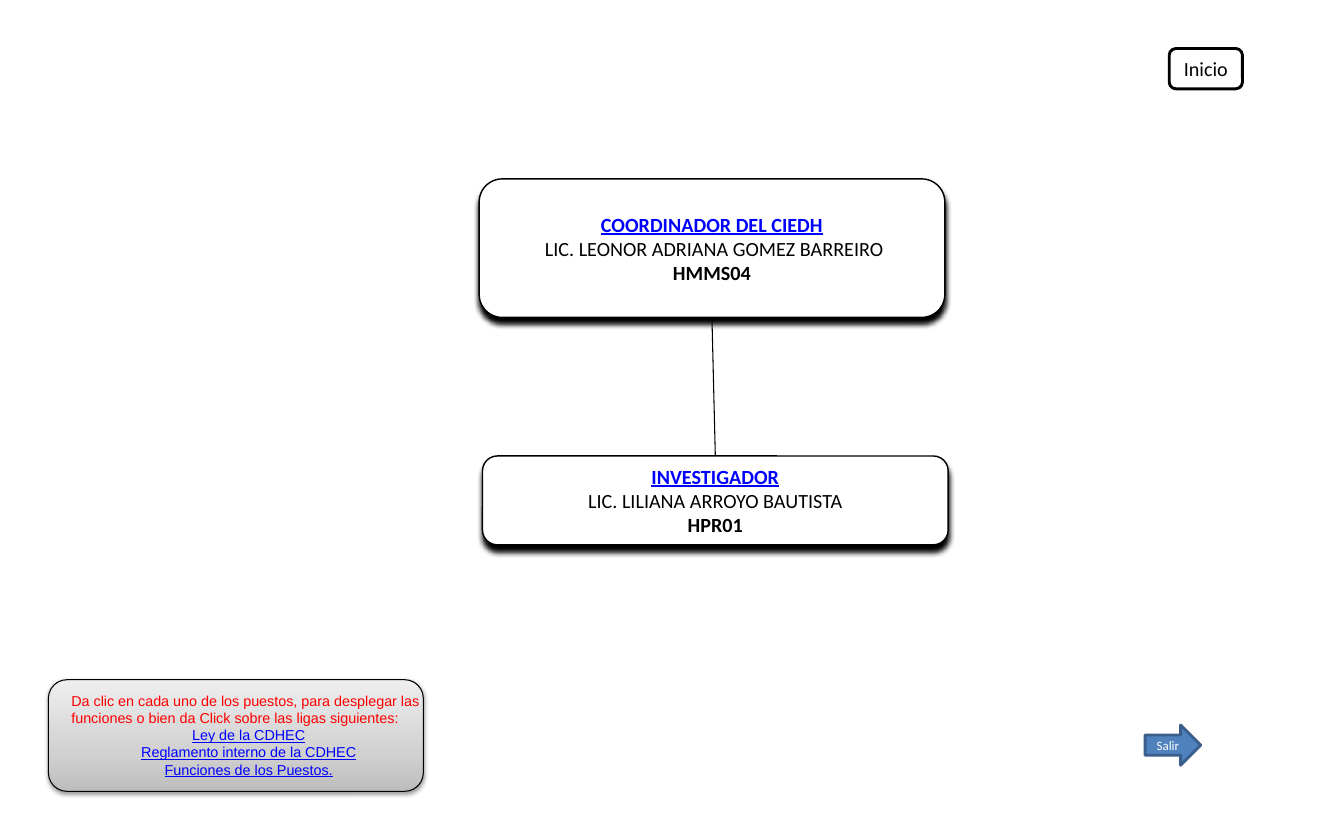
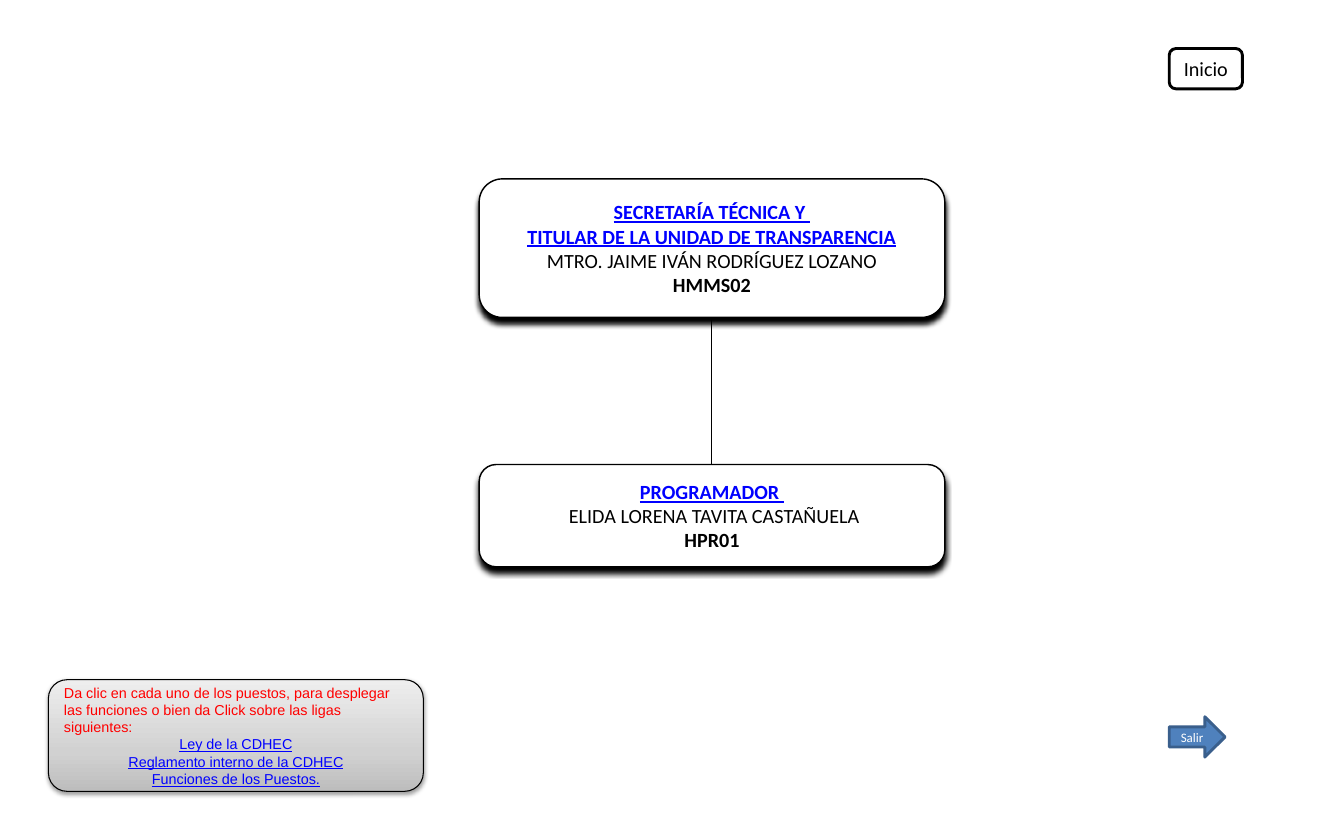
import copy
from dataclasses import dataclass

import lxml.etree
import pptx
import pptx.dml.color
import pptx.enum.shapes
import pptx.enum.text
import pptx.oxml.ns
import pptx.util

SHAPE = pptx.enum.shapes.MSO_SHAPE
ALIGN = pptx.enum.text.PP_ALIGN
qn = pptx.oxml.ns.qn


@dataclass(frozen=True)
class Theme:
    width: float = 12.99
    height: float = 7.88
    heading_font: str = "Calibri"
    note_font: str = "Arial"
    post_size: int = 14
    note_size: int = 10
    exit_size: int = 9
    black: str = "000000"
    white: str = "FFFFFF"
    link: str = "0000FF"
    notice: str = "FF0000"
    arrow_fill: str = "4F81BD"
    arrow_line: str = "3A5F8C"
    panel_stops: tuple = ((0, "BDBDBD"), (0.35, "D1D1D1"), (1, "EEEEEE"))


THEME = Theme()
NOTICE = ("Da clic en cada uno de los puestos, para desplegar las funciones "
          "o bien da Click sobre las ligas siguientes:")
LINKS = ("Ley de la CDHEC", "Reglamento interno de la CDHEC", "Funciones de los Puestos.")
BOX_LEFT, BOX_WIDTH = 35.65, 34.65
HEAD_AREA = (BOX_LEFT, 21.95, BOX_WIDTH, 17)
HOME_AREA = (87, 5.95, 5.45, 4.95)
PANEL_AREA = (3.6, 83.4, 27.9, 13.7)


def color(code):
    return pptx.dml.color.RGBColor.from_string(code)


def area(left, top, width, height):
    def across(share):
        return pptx.util.Inches(THEME.width * share / 100)

    def down(share):
        return pptx.util.Inches(THEME.height * share / 100)

    return across(left), down(top), across(width), down(height)


def write(box, text, size, font=THEME.heading_font, ink=THEME.black,
          bold=False, underline=False, align=ALIGN.CENTER):
    frame = box.text_frame
    para = frame.paragraphs[0]
    if para.runs:
        para = frame.add_paragraph()
    para.alignment = align
    span = para.add_run()
    span.text = text
    span.font.name = font
    span.font.size = pptx.util.Pt(size)
    span.font.bold = bold
    span.font.underline = underline
    span.font.color.rgb = color(ink)


def add_box(page, kind, place, fill=THEME.white, line=THEME.black, weight=1):
    box = page.shapes.add_shape(kind, *area(*place))
    box.shadow.inherit = False
    box.fill.solid()
    box.fill.fore_color.rgb = color(fill)
    box.line.color.rgb = color(line)
    box.line.width = pptx.util.Pt(weight)
    return box


def add_shadow(box, opacity, blur, distance):
    effects = box._element.spPr.find(qn("a:effectLst"))
    shadow = lxml.etree.SubElement(
        effects, qn("a:outerShdw"), blurRad=str(pptx.util.Pt(blur)),
        dist=str(pptx.util.Pt(distance)), dir="5400000", rotWithShape="0")
    ink = lxml.etree.SubElement(shadow, qn("a:srgbClr"), val=THEME.black)
    lxml.etree.SubElement(ink, qn("a:alpha"), val=str(opacity * 1000))


def add_post(page, place, titles, person, code):
    box = add_box(page, SHAPE.ROUNDED_RECTANGLE, place)
    add_shadow(box, opacity=100, blur=4, distance=4)
    frame = box.text_frame
    frame.word_wrap = False
    frame.margin_left = frame.margin_right = pptx.util.Inches(0.17)
    frame.margin_top = frame.margin_bottom = pptx.util.Inches(0.09)
    for title in titles:
        write(box, title, THEME.post_size, ink=THEME.link, bold=True, underline=True)
    write(box, person, THEME.post_size)
    write(box, code, THEME.post_size, bold=True)
    return box


def join(page, upper, lower):
    line = page.shapes.add_connector(pptx.enum.shapes.MSO_CONNECTOR.STRAIGHT, 0, 0, 0, 0)
    line.begin_connect(upper, 2)
    line.end_connect(lower, 0)
    line.line.color.rgb = color(THEME.black)
    line.line.width = pptx.util.Pt(0.75)
    lxml.etree.SubElement(line._element.spPr, qn("a:effectLst"))


def add_panel(page):
    panel = add_box(page, SHAPE.ROUNDED_RECTANGLE, PANEL_AREA, weight=0.75)
    add_shadow(panel, opacity=38, blur=3.1, distance=1.6)
    panel.fill.gradient()
    panel.fill.gradient_angle = 90
    stops = panel._element.spPr.find(".//" + qn("a:gsLst"))
    stops.append(copy.deepcopy(stops[0]))
    for stop, (position, code) in zip(panel.fill.gradient_stops, THEME.panel_stops):
        stop.position = position
        stop.color.rgb = color(code)
    return panel


def add_text_box(page, place):
    box = page.shapes.add_textbox(*area(*place))
    box.text_frame.word_wrap = True
    return box


def write_notice(box):
    write(box, NOTICE, THEME.note_size, font=THEME.note_font,
          ink=THEME.notice, align=ALIGN.LEFT)
    for link in LINKS:
        write(box, link, THEME.note_size, font=THEME.note_font,
              ink=THEME.link, underline=True)


def add_buttons(page, exit_left, exit_top):
    home = add_box(page, SHAPE.ROUNDED_RECTANGLE, HOME_AREA, weight=2)
    write(home, "Inicio", THEME.post_size)
    leave = add_box(page, SHAPE.RIGHT_ARROW, (exit_left, exit_top, 4.15, 4.95),
                    fill=THEME.arrow_fill, line=THEME.arrow_line, weight=2)
    write(leave, "Salir", THEME.exit_size, ink=THEME.white)


def add_page(deck, head, report, report_area, exit_place):
    page = deck.slides.add_slide(deck.slide_layouts[6])
    upper = add_post(page, HEAD_AREA, *head)
    lower = add_post(page, report_area, *report)
    join(page, upper, lower)
    add_buttons(page, *exit_place)
    return page, add_panel(page)


def main():
    deck = pptx.Presentation()
    deck.slide_width = pptx.util.Inches(THEME.width)
    deck.slide_height = pptx.util.Inches(THEME.height)

    page, panel = add_page(
        deck,
        head=(["COORDINADOR DEL CIEDH"], " LIC. LEONOR ADRIANA GOMEZ BARREIRO", "HMMS04"),
        report=(["INVESTIGADOR"], "LIC. LILIANA ARROYO BAUTISTA", "HPR01"),
        report_area=(35.9, 55.95, BOX_WIDTH, 10.9),
        exit_place=(85.2, 88.95))
    write_notice(add_text_box(page, (4.55, 84.25, 27.9, 11.95)))

    page, panel = add_page(
        deck,
        head=(["SECRETARÍA TÉCNICA Y ", "TITULAR DE LA UNIDAD DE TRANSPARENCIA"],
              "MTRO. JAIME IVÁN RODRÍGUEZ LOZANO", "HMMS02"),
        report=(["PROGRAMADOR "], " ELIDA LORENA TAVITA CASTAÑUELA", "HPR01"),
        report_area=(BOX_LEFT, 57, BOX_WIDTH, 12.55),
        exit_place=(87, 87.95))
    write_notice(panel)

    deck.save("out.pptx")


if __name__ == "__main__":
    main()
